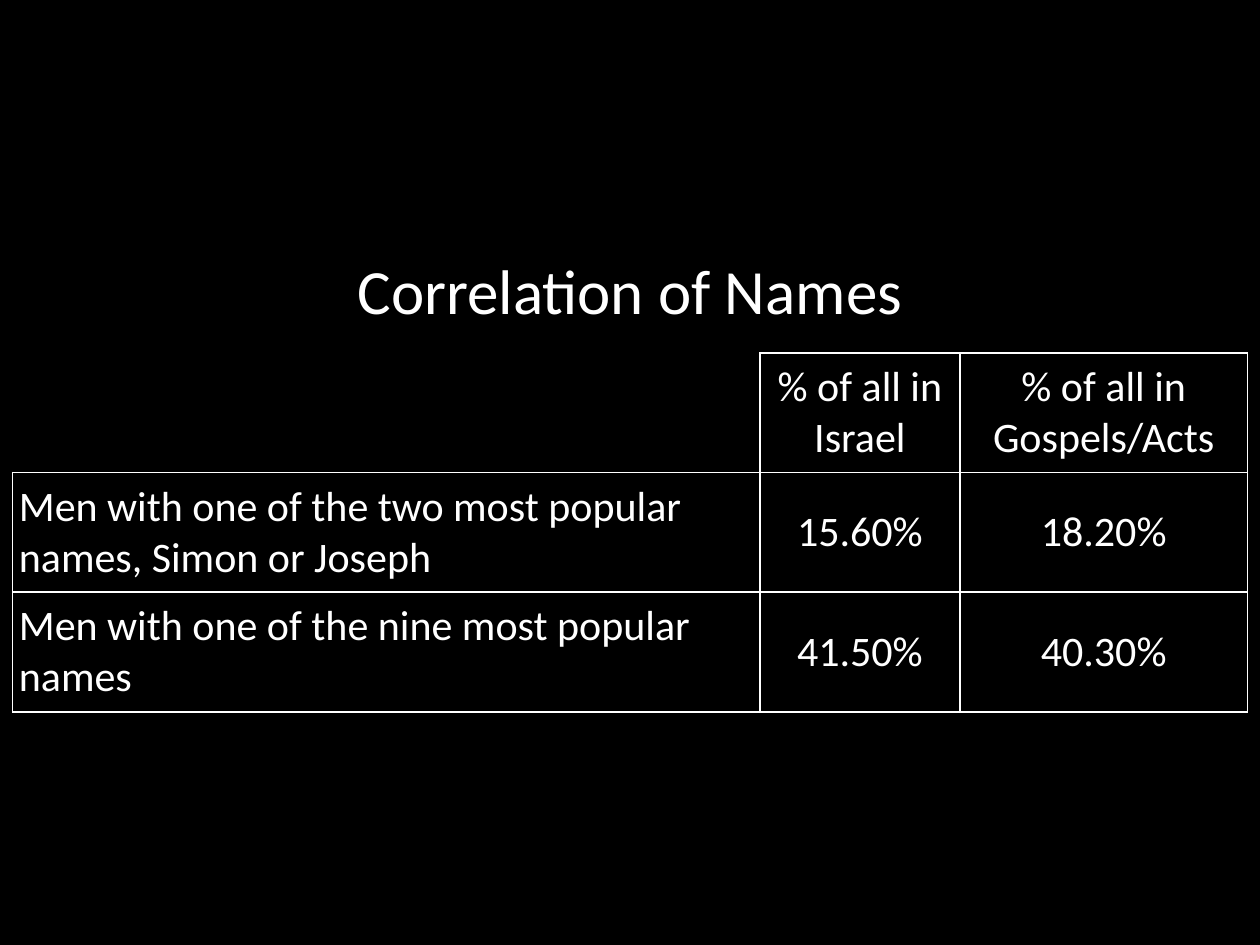
from dataclasses import dataclass

import pptx
import pptx.dml.color
import pptx.enum.text
import pptx.oxml
import pptx.oxml.ns
import pptx.util

COLORS = {"background": "000000", "text": "FFFFFF", "border": "FFFFFF"}
FONT = "Calibri"
PLAIN_TABLE_STYLE = "{2D5ABB26-0587-4C30-8999-92F81FD0307C}"
SLIDE_WIDTH, SLIDE_HEIGHT = 10, 7.5
TABLE_LEFT, TABLE_TOP = 0.1, 1.85
COLUMN_WIDTHS = (5.93, 1.59, 2.28)
ROW_HEIGHT = 0.95
CENTER = pptx.enum.text.PP_ALIGN.CENTER
LEFT = pptx.enum.text.PP_ALIGN.LEFT


@dataclass(frozen=True)
class Entry:
    text: str
    align: pptx.enum.text.PP_ALIGN = CENTER
    size: int = 24
    edges: str = "LRTB"


def data_row(label: str, israel: str, gospels: str) -> list[Entry]:
    return [Entry(label, LEFT), Entry(israel), Entry(gospels)]


ROWS = [
    [Entry("Correlation of Names", size=36, edges="")],
    [Entry("", edges="RB"), Entry("% of all in Israel"), Entry("% of all in Gospels/Acts")],
    data_row("Men with one of the two most popular names, Simon or Joseph", "15.60%", "18.20%"),
    data_row("Men with one of the nine most popular names", "41.50%", "40.30%"),
]


def rgb(name: str) -> pptx.dml.color.RGBColor:
    return pptx.dml.color.RGBColor.from_string(COLORS[name])


def draw_edges(cell, edges: str) -> None:
    """Border lines must stand before the fill in the cell properties."""
    properties = cell._tc.get_or_add_tcPr()
    for position, edge in enumerate(edges):
        line = pptx.oxml.parse_xml(
            f'<a:ln{edge} {pptx.oxml.ns.nsdecls("a")} w="{pptx.util.Pt(1)}">'
            f'<a:solidFill><a:srgbClr val="{COLORS["border"]}"/></a:solidFill></a:ln{edge}>'
        )
        properties.insert(position, line)


def fill_cell(cell, entry: Entry) -> None:
    inset = pptx.util.Inches(0.05)
    cell_format = {
        "margin_left": inset,
        "margin_right": inset,
        "margin_top": inset,
        "margin_bottom": inset,
        "vertical_anchor": pptx.enum.text.MSO_ANCHOR.MIDDLE,
    }
    for attribute, value in cell_format.items():
        setattr(cell, attribute, value)
    cell.fill.background()
    draw_edges(cell, entry.edges)
    if not entry.text:
        return
    paragraph = cell.text_frame.paragraphs[0]
    paragraph.alignment = entry.align
    run = paragraph.add_run()
    run.text = entry.text
    font_format = {"name": FONT, "size": pptx.util.Pt(entry.size), "bold": False}
    for attribute, value in font_format.items():
        setattr(run.font, attribute, value)
    run.font.color.rgb = rgb("text")


def add_names_table(slide) -> None:
    frame = slide.shapes.add_table(
        len(ROWS),
        len(COLUMN_WIDTHS),
        pptx.util.Inches(TABLE_LEFT),
        pptx.util.Inches(TABLE_TOP),
        pptx.util.Inches(sum(COLUMN_WIDTHS)),
        pptx.util.Inches(ROW_HEIGHT * len(ROWS)),
    )
    table = frame.table
    table.first_row = table.horz_banding = False
    table._tbl.tblPr.find(pptx.oxml.ns.qn("a:tableStyleId")).text = PLAIN_TABLE_STYLE
    for column, width in zip(table.columns, COLUMN_WIDTHS):
        column.width = pptx.util.Inches(width)
    table.cell(0, 0).merge(table.cell(0, len(COLUMN_WIDTHS) - 1))
    for row_index, entries in enumerate(ROWS):
        table.rows[row_index].height = pptx.util.Inches(ROW_HEIGHT)
        for column_index, entry in enumerate(entries):
            fill_cell(table.cell(row_index, column_index), entry)


def main() -> None:
    presentation = pptx.Presentation()
    presentation.slide_width = pptx.util.Inches(SLIDE_WIDTH)
    presentation.slide_height = pptx.util.Inches(SLIDE_HEIGHT)
    slide = presentation.slides.add_slide(presentation.slide_layouts[6])
    slide.background.fill.solid()
    slide.background.fill.fore_color.rgb = rgb("background")
    add_names_table(slide)
    presentation.save("out.pptx")


if __name__ == "__main__":
    main()
